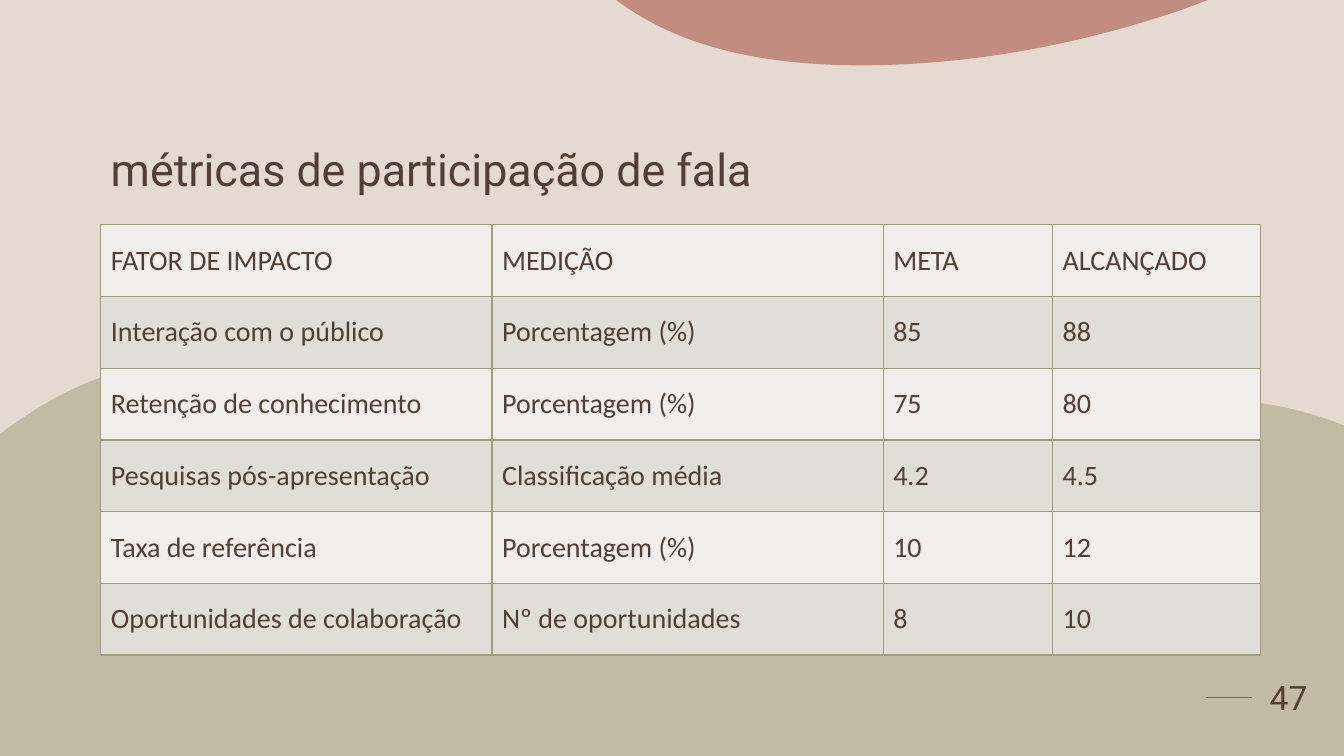
from lxml.etree import SubElement
from pptx import Presentation
from pptx.dml.color import RGBColor
from pptx.enum.shapes import MSO_CONNECTOR as Connector
from pptx.enum.text import MSO_ANCHOR as Anchor, PP_ALIGN as Align
from pptx.oxml.ns import qn
from pptx.util import Inches, Pt

BACKGROUND, BROWN, OLIVE, TERRACOTTA = "E5DACF", "543E34", "A09D79", "AC5B4C"
ROW_FILLS = ["F0EFEC", "DFDFD7"]
UNITS = 1000  # outline units per inch

# Outlines: a one-point segment is straight, a three-point segment is a Bézier curve.
HILL = [
    [(2.02, 3.58)],
    [(2.36, 3.59), (2.7, 3.66), (3.04, 3.79)],
    [(3.34, 3.9), (3.6, 4.08), (3.86, 4.25)],
    [(4.43, 4.62), (5.05, 4.9), (5.77, 5)],
    [(6.37, 5.09), (6.98, 5.03), (7.59, 4.88)],
    [(8.27, 4.72), (8.67, 4.57), (9.08, 4.43)],
    [(9.48, 4.29), (11.61, 3.57), (13.25, 4.19)],
    [(13.33, 4.22)], [(13.33, 7.5)], [(0, 7.5)], [(0, 4.31)], [(0.07, 4.25)],
    [(0.16, 4.19), (0.25, 4.13), (0.34, 4.07)],
    [(0.9, 3.72), (1.46, 3.56), (2.02, 3.58)],
]
TOP_BLOB = [
    [(6.11, 0)], [(11.98, 0)], [(11.77, 0.08)],
    [(10.56, 0.5), (9.61, 0.59), (9.24, 0.62)],
    [(7.56, 0.75), (6.71, 0.41), (6.21, 0.07)],
]
COLUMN_WIDTHS = [3.88, 3.88, 1.68, 2.06]
TABLE_HEIGHT = 4.27
METRICS = [
    ["FATOR DE IMPACTO", "MEDIÇÃO", "META", "ALCANÇADO"],
    ["Interação com o público", "Porcentagem (%)", "85", "88"],
    ["Retenção de conhecimento", "Porcentagem (%)", "75", "80"],
    ["Pesquisas pós-apresentação", "Classificação média", "4.2", "4.5"],
    ["Taxa de referência", "Porcentagem (%)", "10", "12"],
    ["Oportunidades de colaboração", "Nº de oportunidades", "8", "10"],
]


def rgb(color):
    return RGBColor.from_string(color)


def set_fill(fill, color):
    fill.solid()
    fill.fore_color.rgb = rgb(color)


def write(frame, text, size, font, **paragraph_format):
    paragraph = frame.paragraphs[0]
    for name, value in paragraph_format.items():
        setattr(paragraph, name, value)
    run = paragraph.add_run()
    run.text = text
    for name, value in {"size": Pt(size), "name": font}.items():
        setattr(run.font, name, value)
    run.font.color.rgb = rgb(BROWN)


def add_text(slide, box, text, size, anchor, **paragraph_format):
    frame = slide.shapes.add_textbox(*map(Inches, box)).text_frame
    frame.word_wrap = True
    frame.vertical_anchor = anchor
    write(frame, text, size, "Roboto", **paragraph_format)


def bend(line, points, left, top):
    """Turn a straight outline segment into a Bézier curve through its control points."""
    curve = line.makeelement(qn("a:cubicBezTo"))
    for x, y in points:
        SubElement(curve, qn("a:pt"), x=str(round((x - left) * UNITS)),
                   y=str(round((y - top) * UNITS)))
    line.getparent().replace(line, curve)


def add_blob(slide, outline, bottom, color, opacity):
    """Draw a closed organic outline; opacity is a percentage."""
    ends = [segment[-1] for segment in outline]
    left, top = map(min, zip(*ends))
    scaled = [(round(x * UNITS), round(y * UNITS)) for x, y in ends]
    builder = slide.shapes.build_freeform(*scaled[0], scale=Inches(1) / UNITS)
    builder.add_line_segments(scaled[1:], close=False)
    shape = builder.convert_to_shape()
    outline_element = next(shape._element.iter(qn("a:path")))
    for line, segment in zip(outline_element.findall(qn("a:lnTo")), outline[1:]):
        if len(segment) == 3:
            bend(line, segment, left, top)
    SubElement(outline_element, qn("a:close"))
    # Curves may reach below their end points.
    outline_element.set("h", str(round((bottom - top) * UNITS)))
    shape.height = Inches(bottom - top)
    shape.shadow.inherit = False
    shape.line.fill.background()
    set_fill(shape.fill, color)
    color_element = shape._element.spPr.find(qn("a:solidFill"))[0]
    SubElement(color_element, qn("a:alpha"), val=str(opacity * 1000))


def add_line(slide, start, end, color, width):
    line = slide.shapes.add_connector(Connector.STRAIGHT, *map(Inches, start + end))
    line.line.color.rgb = rgb(color)
    line.line.width = Pt(width)
    SubElement(line._element.spPr, qn("a:effectLst"))


def add_borders(cell, color, width):
    properties = cell._tc.get_or_add_tcPr()
    for side in ("lnL", "lnR", "lnT", "lnB"):
        border = SubElement(properties, qn(f"a:{side}"), w=str(Pt(width)))
        fill = SubElement(border, qn("a:solidFill"))
        SubElement(fill, qn("a:srgbClr"), val=color)


def add_metrics_table(slide, left, top):
    box = map(Inches, (left, top, sum(COLUMN_WIDTHS), TABLE_HEIGHT))
    table = slide.shapes.add_table(len(METRICS), len(COLUMN_WIDTHS), *box).table
    table.first_row = table.horz_banding = False
    for column, width in zip(table.columns, COLUMN_WIDTHS):
        column.width = Inches(width)
    for index, (row, texts) in enumerate(zip(table.rows, METRICS)):
        for cell, text in zip(row.cells, texts):
            cell.vertical_anchor = Anchor.MIDDLE
            add_borders(cell, OLIVE, 1)
            set_fill(cell.fill, ROW_FILLS[index % 2])
            write(cell.text_frame, text, 20, "Calibri")


def main():
    presentation = Presentation()
    presentation.slide_width = Inches(13.33)
    presentation.slide_height = Inches(7.5)
    slide = presentation.slides.add_slide(presentation.slide_layouts[6])
    set_fill(slide.background.fill, BACKGROUND)
    add_line(slide, (11.96, 6.92), (12.42, 6.92), BROWN, 1.25)
    add_blob(slide, HILL, 7.5, OLIVE, 50)
    add_blob(slide, TOP_BLOB, 0.65, TERRACOTTA, 60)
    add_text(slide, (1, 1, 11.33, 1), "métricas de participação de fala", 32,
             Anchor.BOTTOM, line_spacing=0.9)
    add_metrics_table(slide, 1, 2.23)
    add_text(slide, (12.42, 6.43, 0.72, 0.98), "47", 24,
             Anchor.MIDDLE, alignment=Align.CENTER)
    presentation.save("out.pptx")


if __name__ == "__main__":
    main()
